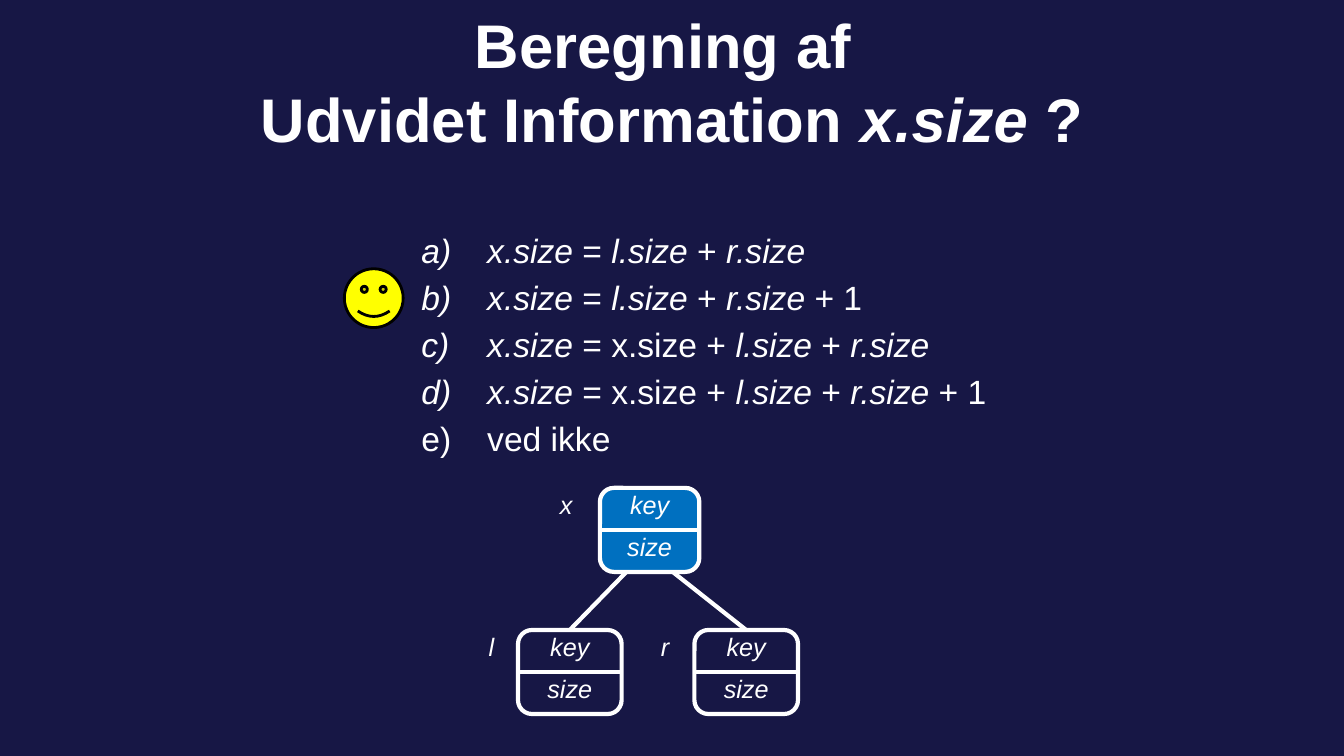
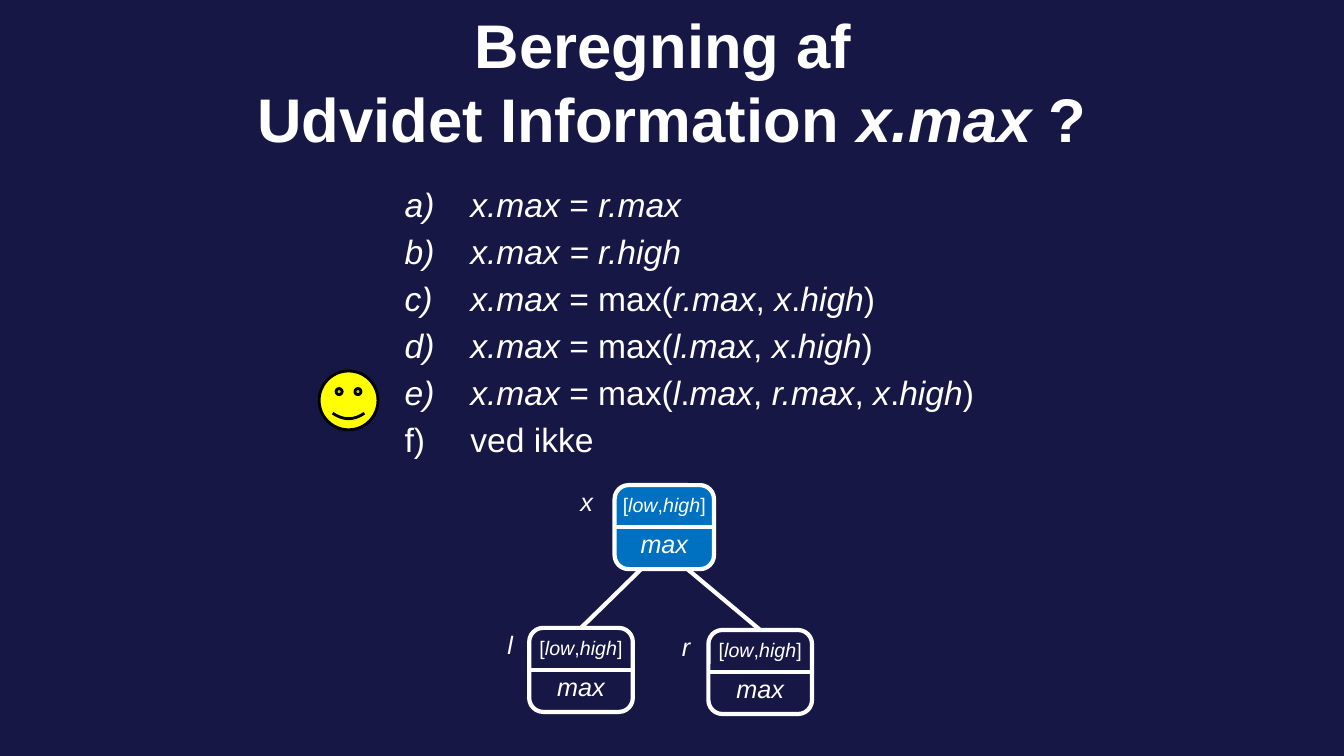
from pptx import Presentation
from pptx.dml.color import RGBColor
from pptx.enum.shapes import MSO_CONNECTOR, MSO_SHAPE
from pptx.enum.text import MSO_ANCHOR, MSO_AUTO_SIZE, PP_ALIGN
from pptx.oxml.ns import qn
from pptx.util import Pt
from lxml import etree

NAVY = RGBColor(0x17, 0x17, 0x45)
BLUE = RGBColor(0x00, 0x70, 0xC0)
WHITE = RGBColor(0xFF, 0xFF, 0xFF)
YELLOW = RGBColor(0xFF, 0xFF, 0x00)
BLACK = RGBColor(0x00, 0x00, 0x00)
FONT = "Arial"

# Text between asterisks is italic; lengths are points.
# A node is: name, left, top, width, distance from its edge to the name's centre.
SLIDES = [
    {
        "title": "Beregning af \vUdvidet Information *x.size *?",
        "options": [
            "*x.size* = *l.size* + *r.size*",
            "*x.size* = *l.size* + *r.size* + 1",
            "*x.size* = x.size + *l.size* + *r.size*",
            "*x.size* = x.size + *l.size* + *r.size* + 1",
            "ved ikke",
        ],
        "options_at": (294, 155.5),
        "smiley_at": (246, 192),
        "rows": [("*key*", 18), ("*size*", 18)],
        "nodes": [
            ("x", 428.5, 348.5, 71, 24),
            ("l", 370, 450, 74, 19),
            ("r", 496, 450, 74, 21),
        ],
    },
    {
        "title": "Beregning af \vUdvidet Information *x.max *?",
        "options": [
            "*x.max* = *r.max*",
            "*x.max = r.high*",
            "*x.max* = max(*r.max*, *x*.*high*)",
            "*x.max* = max(*l.max*, *x*.*high*)",
            "*x.max* = max(*l*.*max*, *r.max*, *x*.*high*)",
            "ved ikke",
        ],
        "options_at": (282, 123),
        "smiley_at": (228, 265),
        "rows": [("[*low*,*high*]", 14), ("*max*", 18)],
        "nodes": [
            ("x", 439, 346.5, 71, 20),
            ("l", 378, 448.5, 74, 13.5),
            ("r", 506, 450, 74, 16),
        ],
    },
]

NODE_HEIGHT = 60
ROW_HEIGHT = NODE_HEIGHT / 2
LABEL_HEIGHT = 22
NAME_WIDTH = 20
EDGE_SPREAD = 16.5
OPTION_INDENT = 47
SMILEY_SIZE = 42


def write(paragraph, marked_text, size, bold=False):
    """Fill a paragraph, setting the parts between asterisks in italics."""
    parts = marked_text.split("*")
    for index, part in enumerate(parts):
        lines = part.split("\v")
        for number, line in enumerate(lines):
            if number:
                paragraph.add_line_break()
            if not line:
                continue
            run = paragraph.add_run()
            run.text = line
            font = run.font
            font.name, font.size, font.bold = FONT, Pt(size), bold
            font.italic = index % 2 == 1
            font.color.rgb = WHITE


def prepare_frame(frame, anchor, wrap=True):
    frame.margin_left = frame.margin_right = 0
    frame.margin_top = frame.margin_bottom = 0
    frame.word_wrap = wrap
    frame.auto_size = MSO_AUTO_SIZE.NONE
    frame.vertical_anchor = anchor
    return frame


def add_title(slide, text):
    title = slide.shapes.title
    title.left, title.top, title.width, title.height = Pt(120), Pt(5), Pt(720), Pt(106)
    paragraph = prepare_frame(title.text_frame, MSO_ANCHOR.MIDDLE).paragraphs[0]
    paragraph.alignment = PP_ALIGN.CENTER
    paragraph.line_spacing = Pt(52.8)
    write(paragraph, text, 44, bold=True)


def add_options(slide, options, left, top):
    box = slide.shapes.add_textbox(Pt(left + 7), Pt(top + 3.6), Pt(420), Pt(34 * len(options)))
    frame = prepare_frame(box.text_frame, MSO_ANCHOR.TOP)
    for index, option in enumerate(options):
        paragraph = frame.add_paragraph() if index else frame.paragraphs[0]
        paragraph.line_spacing = Pt(33.6)
        write(paragraph, option, 24)
        props = paragraph._p.get_or_add_pPr()
        props.set("marL", str(Pt(OPTION_INDENT)))
        props.set("indent", str(-Pt(OPTION_INDENT)))
        bullet_font = etree.SubElement(props, qn("a:buFont"))
        bullet_font.set("typeface", FONT)
        etree.SubElement(props, qn("a:buAutoNum")).set("type", "alphaLcParenR")


def add_shape(slide, kind, box, fill, line, line_width):
    shape = slide.shapes.add_shape(kind, *map(Pt, box))
    shape.shadow.inherit = False
    if fill is None:
        shape.fill.background()
    else:
        shape.fill.solid()
        shape.fill.fore_color.rgb = fill
    shape.line.color.rgb = line
    shape.line.width = Pt(line_width)
    return shape


def add_line(slide, start, end):
    line = slide.shapes.add_connector(MSO_CONNECTOR.STRAIGHT, *map(Pt, start + end))
    line.line.color.rgb = WHITE
    line.line.width = Pt(3)
    etree.SubElement(line._element.spPr, qn("a:effectLst"))
    return line


def add_label(slide, text, size, left, top, width):
    box = slide.shapes.add_textbox(Pt(left), Pt(top), Pt(width), Pt(LABEL_HEIGHT))
    paragraph = prepare_frame(box.text_frame, MSO_ANCHOR.BOTTOM, wrap=False).paragraphs[0]
    paragraph.alignment = PP_ALIGN.CENTER
    write(paragraph, text, size)


def add_node(slide, node, rows, fill):
    name, left, top, width, name_gap = node
    shape = add_shape(slide, MSO_SHAPE.ROUNDED_RECTANGLE,
                      (left, top, width, NODE_HEIGHT), fill, WHITE, 3)
    middle = top + ROW_HEIGHT
    divider = add_line(slide, (left, middle), (left + width, middle))
    divider.begin_connect(shape, 1)
    divider.end_connect(shape, 3)
    add_label(slide, f"*{name}*", 18, left - name_gap - NAME_WIDTH / 2, top + 0.5, NAME_WIDTH)
    for index, (text, size) in enumerate(rows):
        add_label(slide, text, size, left, top + 0.5 + index * ROW_HEIGHT, width)
    return shape


def add_tree(slide, nodes, rows):
    root, *children = nodes
    add_node(slide, root, rows, BLUE)
    _, root_left, root_top, root_width, _ = root
    root_centre = root_left + root_width / 2
    for child, side in zip(children, (-1, 1)):
        shape = add_node(slide, child, rows, None)
        _, left, top, width, _ = child
        edge = add_line(slide,
                        (root_centre + side * EDGE_SPREAD, root_top + NODE_HEIGHT),
                        (left + width / 2, top))
        edge.end_connect(shape, 0)


def main():
    prs = Presentation()
    prs.slide_width, prs.slide_height = Pt(960), Pt(540)
    background = prs.slide_master.background.fill
    background.solid()
    background.fore_color.rgb = NAVY
    title_only = prs.slide_layouts[5]
    for content in SLIDES:
        slide = prs.slides.add_slide(title_only)
        add_title(slide, content["title"])
        add_options(slide, content["options"], *content["options_at"])
        add_shape(slide, MSO_SHAPE.SMILEY_FACE,
                  (*content["smiley_at"], SMILEY_SIZE, SMILEY_SIZE), YELLOW, BLACK, 2)
        add_tree(slide, content["nodes"], content["rows"])
    prs.save("out.pptx")


if __name__ == "__main__":
    main()
